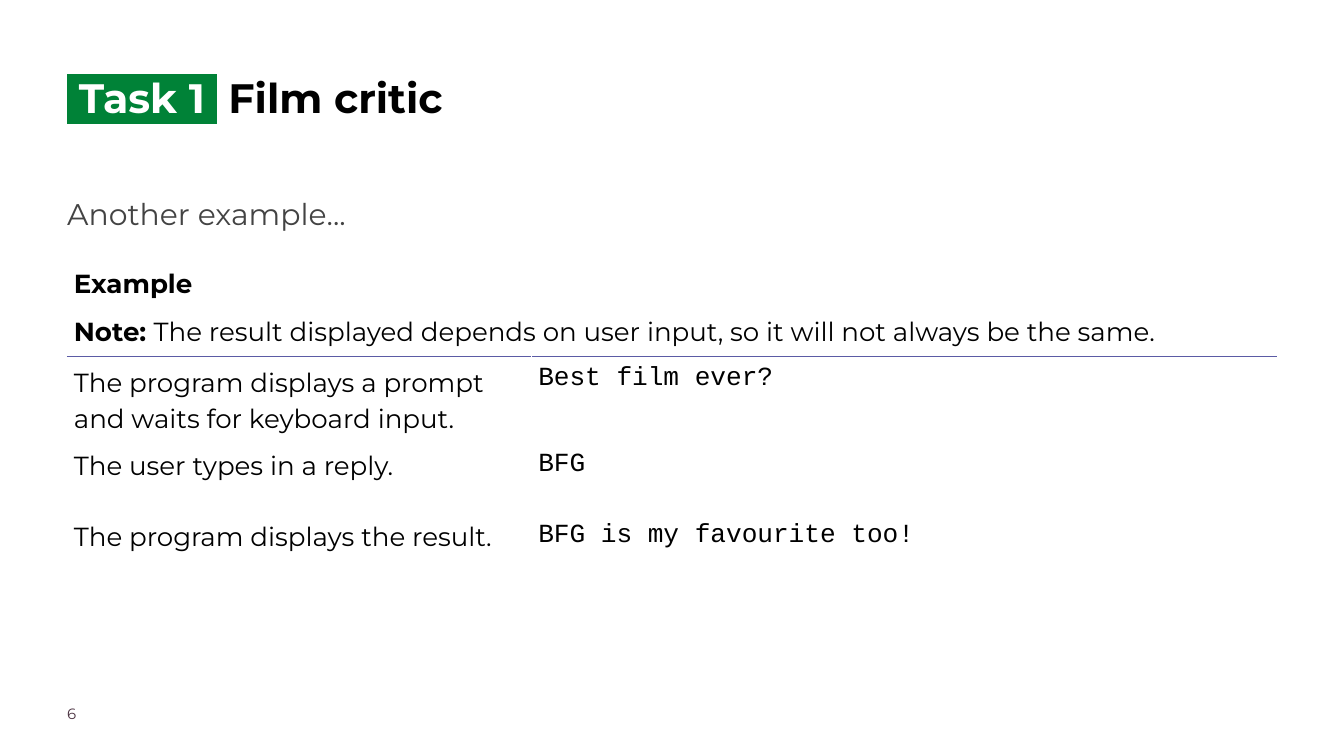
from lxml.etree import SubElement
from pptx import Presentation
from pptx.dml.color import RGBColor
from pptx.enum.text import MSO_ANCHOR, MSO_AUTO_SIZE, PP_ALIGN
from pptx.oxml.ns import qn
from pptx.util import Inches, Pt

WHITE = RGBColor(0xFF, 0xFF, 0xFF)
BLACK = RGBColor(0x00, 0x00, 0x00)
GREEN = RGBColor(0x00, 0x82, 0x37)
GREY = RGBColor(0x43, 0x43, 0x43)
PLUM = RGBColor(0x4B, 0x32, 0x41)
VIOLET = RGBColor(0x5B, 0x5B, 0xA5)

SANS = "Montserrat"
MONO = "Courier New"
LEFT = 1
COLUMN_WIDTHS = [6.91, 11.08]
ROW_HEIGHTS = [0.6, 0.81, 1.28, 1.06, 1.06]
NOTE_ROW = 1

STEPS = [
    ("The program displays a prompt and waits for keyboard input.", "Best film ever?"),
    ("The user types in a reply.", "BFG"),
    ("The program displays the result.", "BFG is my favourite too!"),
]


def add_run(paragraph, text, size=28, font=SANS, color=BLACK, bold=False, highlight=None):
    run = paragraph.add_run()
    run.text = text
    run.font.size = Pt(size)
    run.font.bold = bold
    run.font.name = font
    run.font.color.rgb = color
    if highlight is not None:
        properties = run._r.get_or_add_rPr()
        mark = SubElement(properties, qn("a:highlight"))
        SubElement(mark, qn("a:srgbClr"), val=str(highlight))
        properties.find(qn("a:solidFill")).addnext(mark)


def set_margins(target, left=0, top=0, right=0, bottom=0):
    target.margin_left, target.margin_top = Inches(left), Inches(top)
    target.margin_right, target.margin_bottom = Inches(right), Inches(bottom)


def set_borders(cell, top=WHITE, bottom=WHITE):
    properties = cell._tc.get_or_add_tcPr()
    for side, color in zip("LRTB", (WHITE, WHITE, top, bottom)):
        line = SubElement(properties, qn(f"a:ln{side}"), w=str(Pt(1)))
        fill = SubElement(line, qn("a:solidFill"))
        SubElement(fill, qn("a:srgbClr"), val=str(color))


class TaskSlide:
    def __init__(self, presentation):
        self.slide = presentation.slides.add_slide(presentation.slide_layouts[5])

    def prepare_frame(self, frame, line_spacing):
        set_margins(frame)
        frame.word_wrap = True
        frame.auto_size = MSO_AUTO_SIZE.NONE
        frame.vertical_anchor = MSO_ANCHOR.TOP
        paragraph = frame.paragraphs[0]
        paragraph.alignment = PP_ALIGN.LEFT
        paragraph.line_spacing = line_spacing
        return paragraph

    def title(self, label, heading):
        title = self.slide.shapes.title
        title.left, title.top = Inches(LEFT), Inches(0.97)
        title.width, title.height = Inches(14.44), Inches(1.78)
        paragraph = self.prepare_frame(title.text_frame, 1.15)
        add_run(paragraph, f" {label} ", size=44, color=WHITE, bold=True, highlight=GREEN)
        add_run(paragraph, f" {heading}", size=44, bold=True)

    def text(self, text, top, width, height, line_spacing=1.0, **style):
        box = self.slide.shapes.add_textbox(
            Inches(LEFT), Inches(top), Inches(width), Inches(height))
        add_run(self.prepare_frame(box.text_frame, line_spacing), text, **style)

    def table(self, top):
        table = self.slide.shapes.add_table(
            len(ROW_HEIGHTS), len(COLUMN_WIDTHS), Inches(LEFT), Inches(top),
            Inches(sum(COLUMN_WIDTHS)), Inches(sum(ROW_HEIGHTS))).table
        table.first_row = table.horz_banding = False
        for column, width in zip(table.columns, COLUMN_WIDTHS):
            column.width = Inches(width)
        for index, (row, height) in enumerate(zip(table.rows, ROW_HEIGHTS)):
            row.height = Inches(height)
            for cell in row.cells:
                set_borders(cell,
                            top=VIOLET if index == NOTE_ROW + 1 else WHITE,
                            bottom=VIOLET if index == NOTE_ROW else WHITE)
                cell.fill.background()
        table.cell(NOTE_ROW, 0).merge(table.cell(NOTE_ROW, 1))
        return table

    def heading_cell(self, cell, bold_text, plain_text=""):
        set_margins(cell, left=0.1, right=0.1)
        cell.vertical_anchor = MSO_ANCHOR.MIDDLE
        paragraph = cell.text_frame.paragraphs[0]
        paragraph.line_spacing = 1.14
        add_run(paragraph, bold_text, bold=True)
        if plain_text:
            add_run(paragraph, plain_text)

    def step_cell(self, cell, text, font, top_margin=0.04):
        set_margins(cell, 0.1, top_margin, 0.1, 0.04)
        paragraph = cell.text_frame.paragraphs[0]
        paragraph.line_spacing = 1.15
        add_run(paragraph, text, font=font)


def main():
    presentation = Presentation()
    presentation.slide_width, presentation.slide_height = Inches(20), Inches(11.25)

    slide = TaskSlide(presentation)
    slide.title("Task 1", "Film critic")
    slide.text("Another example...", 2.75, 17.99, 6.91, line_spacing=1.3, size=32, color=GREY)
    slide.text("6", 10.48, 1.57, 0.39, size=16, color=PLUM)

    example = slide.table(top=3.9)
    slide.heading_cell(example.cell(0, 0), "Example")
    slide.heading_cell(
        example.cell(NOTE_ROW, 0), "Note: ",
        "The result displayed depends on user input, so it will not always be the same.")
    first_step = NOTE_ROW + 1
    for row, (explanation, output) in enumerate(STEPS, start=first_step):
        slide.step_cell(example.cell(row, 0), explanation, SANS,
                        top_margin=0.08 if row == first_step else 0.04)
        slide.step_cell(example.cell(row, 1), output, MONO)

    presentation.save("out.pptx")


if __name__ == "__main__":
    main()
